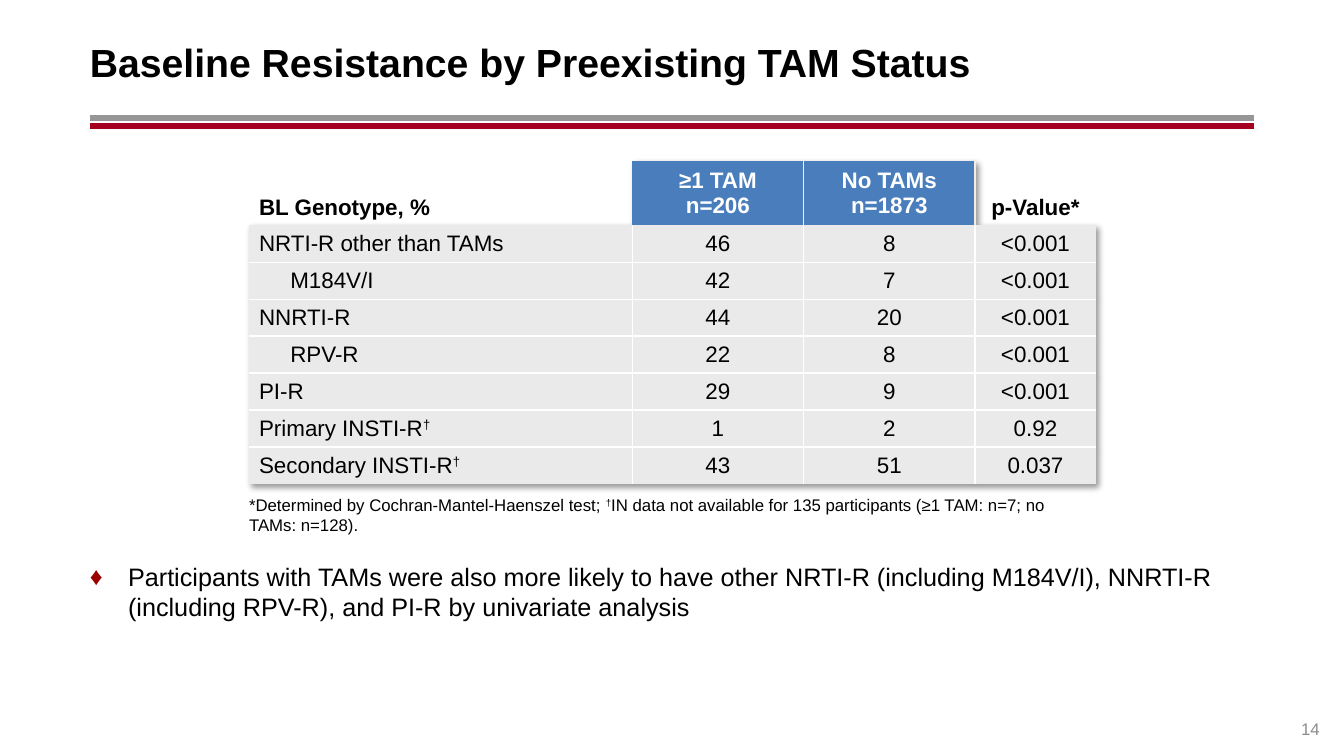
import pptx
import pptx.dml.color
import pptx.enum.shapes
import pptx.enum.text
import pptx.oxml
import pptx.oxml.ns
import pptx.util

ALIGN = pptx.enum.text.PP_ALIGN
ANCHOR = pptx.enum.text.MSO_ANCHOR
NS = pptx.oxml.ns.nsdecls("a")


class Theme:
    font = "Arial"
    black = "000000"
    white = "FFFFFF"
    gray_rule = "969696"
    red_rule = "A50021"
    bullet = "990000"
    page = "8C8C8C"
    header = "497DBC"
    header_divider = "F5EDDF"
    body = "EAEAEA"
    title_size = 28
    bullet_size = 18
    table_size = 16
    small_size = 12


ROWS = [
    ("NRTI-R other than TAMs", "46", "8", "<0.001"),
    ("M184V/I", "42", "7", "<0.001"),
    ("NNRTI-R", "44", "20", "<0.001"),
    ("RPV-R", "22", "8", "<0.001"),
    ("PI-R", "29", "9", "<0.001"),
    ("Primary INSTI-R†", "1", "2", "0.92"),
    ("Secondary INSTI-R†", "43", "51", "0.037"),
]
HEADERS = ("BL Genotype, %", "≥1 TAM\nn=206", "No TAMs\nn=1873", "p-Value*")
SUBTYPES = ("M184V/I", "RPV-R")


def px(n):
    return pptx.util.Emu(n * 9144)


def rgb(value):
    return pptx.dml.color.RGBColor.from_string(value)


def xml(markup):
    return pptx.oxml.parse_xml(markup)


def write(tf, text, size, color=Theme.black, bold=False, align=ALIGN.LEFT, indent=0):
    for i, line in enumerate(text.split("\n")):
        p = tf.paragraphs[0] if i == 0 else tf.add_paragraph()
        p.alignment = align
        if indent:
            p._p.get_or_add_pPr().set("marL", str(px(indent)))
        for part in line.partition("†"):
            if not part:
                continue
            r = p.add_run()
            r.text = part
            r.font.name = Theme.font
            r.font.size = pptx.util.Pt(size)
            r.font.bold = bold
            r.font.color.rgb = rgb(color)
            if part == "†":
                r._r.get_or_add_rPr().set("baseline", "30000")


def add_text(s, box, text, size, anchor=ANCHOR.TOP, insets=(0, 0, 0, 0), **fmt):
    tf = s.shapes.add_textbox(*map(px, box)).text_frame
    tf.word_wrap = True
    tf.vertical_anchor = anchor
    tf.margin_left, tf.margin_top, tf.margin_right, tf.margin_bottom = map(px, insets)
    write(tf, text, size, **fmt)
    return tf


def add_rule(s, y, color):
    sp = s.shapes.add_connector(
        pptx.enum.shapes.MSO_CONNECTOR.STRAIGHT, px(89), px(y), px(1244), px(y))
    sp.line.color.rgb = rgb(color)
    sp.line.width = pptx.util.Pt(4.25)
    sp._element.spPr.append(xml(f"<a:effectLst {NS}/>"))


def add_bullet(p, char, color, hang):
    p.space_before = pptx.util.Pt(9)
    pPr = p._p.get_or_add_pPr()
    pPr.set("marL", str(px(hang)))
    pPr.set("indent", str(-px(hang)))
    pPr.append(xml(f'<a:buClr {NS}><a:srgbClr val="{color}"/></a:buClr>'))
    pPr.append(xml(f'<a:buFont {NS} typeface="{Theme.font}"/>'))
    pPr.append(xml(f'<a:buChar {NS} char="{char}"/>'))


def set_borders(cell, sides, color):
    tcPr = cell._tc.get_or_add_tcPr()
    for side in sides:
        tcPr.append(xml(
            f'<a:ln{side} {NS} w="12700"><a:solidFill><a:srgbClr val="{color}"/>'
            f'</a:solidFill></a:ln{side}>'))


def fill_cell(cell, color):
    cell.fill.solid()
    cell.fill.fore_color.rgb = rgb(color)


def style_header(cell, col, text):
    shaded = col in (1, 2)
    cell.vertical_anchor = ANCHOR.MIDDLE if shaded else ANCHOR.BOTTOM
    if shaded:
        set_borders(cell, "R" if col == 1 else "L", Theme.header_divider)
        fill_cell(cell, Theme.header)
    else:
        cell.fill.background()
    write(cell.text_frame, text, Theme.table_size, bold=True,
          color=Theme.white if shaded else Theme.black,
          align=ALIGN.CENTER if col else ALIGN.LEFT)


def style_body(cell, row, col, text):
    cell.vertical_anchor = ANCHOR.MIDDLE
    inner = {"L": col > 0, "R": col < len(HEADERS) - 1,
             "T": row > 1, "B": row < len(ROWS)}
    set_borders(cell, [side for side, shown in inner.items() if shown], Theme.white)
    fill_cell(cell, Theme.body)
    write(cell.text_frame, text, Theme.table_size,
          align=ALIGN.CENTER if col else ALIGN.LEFT,
          indent=31 if text in SUBTYPES else 0)


def add_resistance_table(s):
    widths = (380, 170, 170, 120)
    heights = [60] + [35] * len(ROWS)
    table = s.shapes.add_table(
        len(heights), len(widths), px(247), px(160),
        px(sum(widths)), px(sum(heights))).table
    table.first_row = False
    table.horz_banding = False
    tblPr = table._tbl.tblPr
    tblPr[0].text = "{2D5ABB26-0587-4C30-8999-92F81FD0307C}"
    tblPr.insert(0, xml(
        f'<a:effectLst {NS}><a:outerShdw blurRad="50800" dist="38100" dir="2700000" '
        'algn="tl" rotWithShape="0"><a:srgbClr val="000000"><a:alpha val="40000"/>'
        '</a:srgbClr></a:outerShdw></a:effectLst>'))
    for column, width in zip(table.columns, widths):
        column.width = px(width)
    for row, height in zip(table.rows, heights):
        row.height = px(height)
    for col, text in enumerate(HEADERS):
        style_header(table.cell(0, col), col, text)
    for row, values in enumerate(ROWS, 1):
        for col, text in enumerate(values):
            style_body(table.cell(row, col), row, col, text)


def main():
    prs = pptx.Presentation()
    prs.slide_width, prs.slide_height = px(1333), px(750)
    s = prs.slides.add_slide(prs.slide_layouts[6])
    add_rule(s, 117, Theme.gray_rule)
    add_rule(s, 125, Theme.red_rule)
    add_text(s, (89, 18, 1155, 86), "Baseline Resistance by Preexisting TAM Status",
             Theme.title_size, anchor=ANCHOR.MIDDLE, insets=(0, 5, 10, 5), bold=True)
    add_text(s, (247, 491, 820, 40),
             "*Determined by Cochran-Mantel-Haenszel test; †IN data not available for "
             "135 participants (≥1 TAM: n=7; no TAMs: n=128).",
             Theme.small_size, anchor=ANCHOR.BOTTOM)
    add_text(s, (1244, 693, 65, 40), "14", Theme.small_size, anchor=ANCHOR.BOTTOM,
             color=Theme.page, align=ALIGN.RIGHT)
    add_resistance_table(s)
    tf = add_text(s, (89, 552, 1155, 112),
                  "Participants with TAMs were also more likely to have other NRTI-R "
                  "(including M184V/I), NNRTI-R (including RPV-R), and PI-R by "
                  "univariate analysis",
                  Theme.bullet_size, insets=(0, 5, 10, 5))
    add_bullet(tf.paragraphs[0], "♦", Theme.bullet, 38)
    prs.save("out.pptx")


if __name__ == "__main__":
    main()
